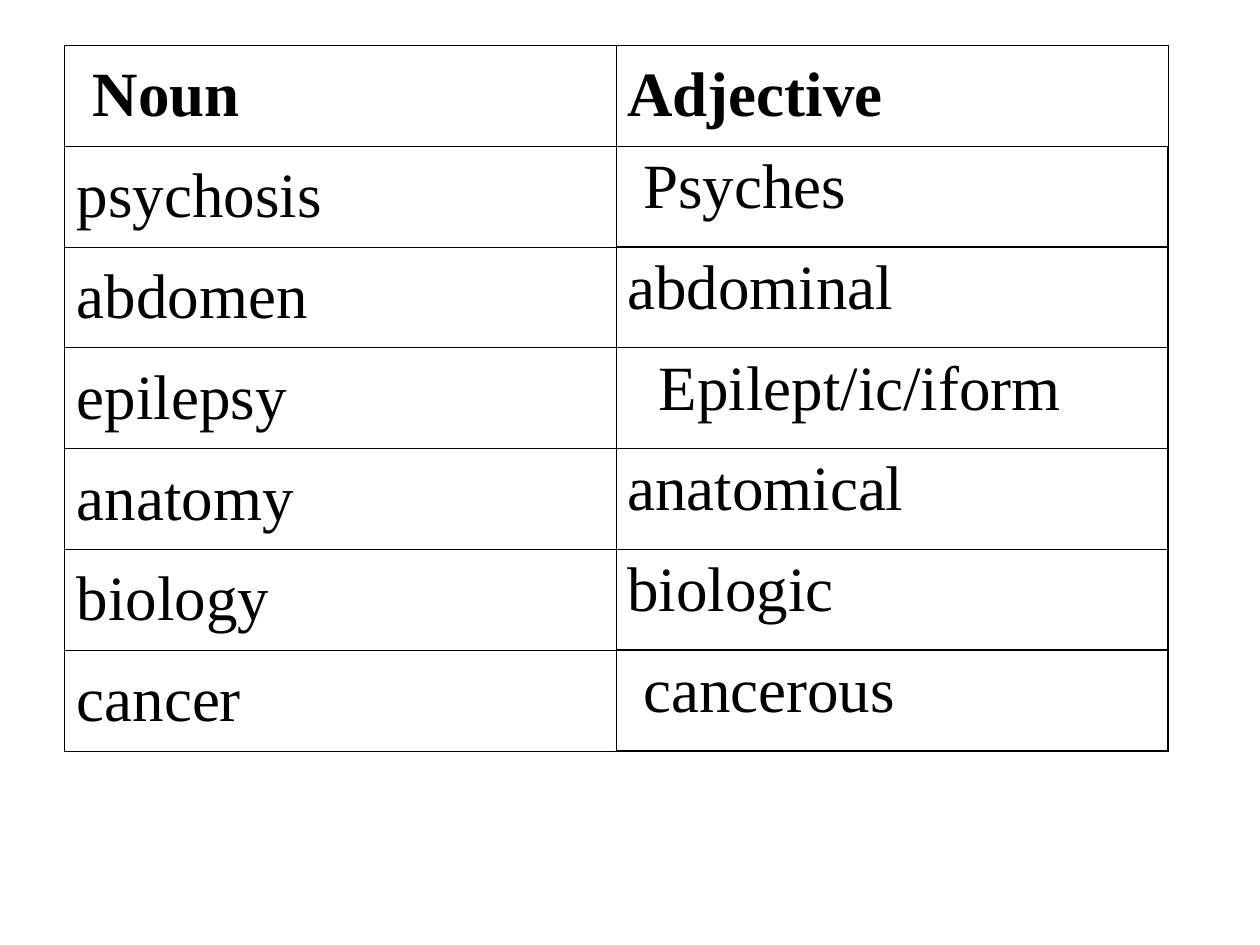
from dataclasses import dataclass

from lxml import etree
from pptx import Presentation
from pptx.dml.color import RGBColor
from pptx.enum import text
from pptx.oxml.ns import qn
from pptx.util import Inches, Pt

SLIDE_WIDTH, SLIDE_HEIGHT = 10, 7.5
LEFT, TOP, COLUMN_WIDTH, ROW_HEIGHT = 0.51, 0.36, 4.38, 0.8
INK = "000000"
THIN, MEDIUM = 0.5, 1
INDENT_STEP = 0.125
MIDDLE, UPPER = text.MSO_ANCHOR.MIDDLE, text.MSO_ANCHOR.TOP


@dataclass
class Entry:
    word: str
    indent: int = 0


ROWS = [
    (Entry("Noun", 1), Entry("Adjective")),
    (Entry("psychosis"), Entry("Psyches", 1)),
    (Entry("abdomen"), Entry("abdominal")),
    (Entry("epilepsy"), Entry("Epilept/ic/iform", 2)),
    (Entry("anatomy"), Entry("anatomical")),
    (Entry("biology"), Entry("biologic")),
    (Entry("cancer"), Entry("cancerous", 1)),
]


def color(value: str) -> RGBColor:
    return RGBColor.from_string(value)


def set_borders(cell, widths: dict[str, float]) -> None:
    properties = cell._tc.get_or_add_tcPr()
    for position, (side, width) in enumerate(widths.items()):
        line = etree.Element(qn(f"a:ln{side}"), w=str(int(Pt(width))))
        fill = etree.SubElement(line, qn("a:solidFill"))
        etree.SubElement(fill, qn("a:srgbClr"), val=INK)
        properties.insert(position, line)


def fill_cell(cell, entry: Entry, row: int, column: int) -> None:
    adjective = row > 0 and column == 1
    cell.fill.background()
    layout = {
        "vertical_anchor": UPPER if adjective else MIDDLE,
        "margin_left": Inches(0.09 if column else 0.1),
    }
    for name, value in layout.items():
        setattr(cell, name, value)
    outer = MEDIUM if adjective else THIN
    upper = MEDIUM if adjective and row > 1 else THIN
    set_borders(cell, {"L": THIN, "R": outer, "T": upper, "B": outer})

    paragraph = cell.text_frame.paragraphs[0]
    paragraph.alignment = text.PP_ALIGN.LEFT
    if entry.indent:
        margin = Inches(entry.indent * INDENT_STEP)
        paragraph._p.get_or_add_pPr().set("marL", str(int(margin)))
    run = paragraph.add_run()
    run.text = entry.word
    style = {"name": "Times New Roman", "size": Pt(36), "bold": row == 0}
    for name, value in style.items():
        setattr(run.font, name, value)
    run.font.color.rgb = color(INK)


def add_word_table(slide) -> None:
    columns = len(ROWS[0])
    table = slide.shapes.add_table(
        len(ROWS), columns, Inches(LEFT), Inches(TOP),
        Inches(columns * COLUMN_WIDTH), Inches(len(ROWS) * ROW_HEIGHT),
    ).table
    table.first_row = table.horz_banding = False
    for row, entries in enumerate(ROWS):
        for column, entry in enumerate(entries):
            fill_cell(table.cell(row, column), entry, row, column)


def main() -> None:
    presentation = Presentation()
    presentation.slide_width = Inches(SLIDE_WIDTH)
    presentation.slide_height = Inches(SLIDE_HEIGHT)
    slide = presentation.slides.add_slide(presentation.slide_layouts[6])
    add_word_table(slide)
    presentation.save("out.pptx")


if __name__ == "__main__":
    main()
